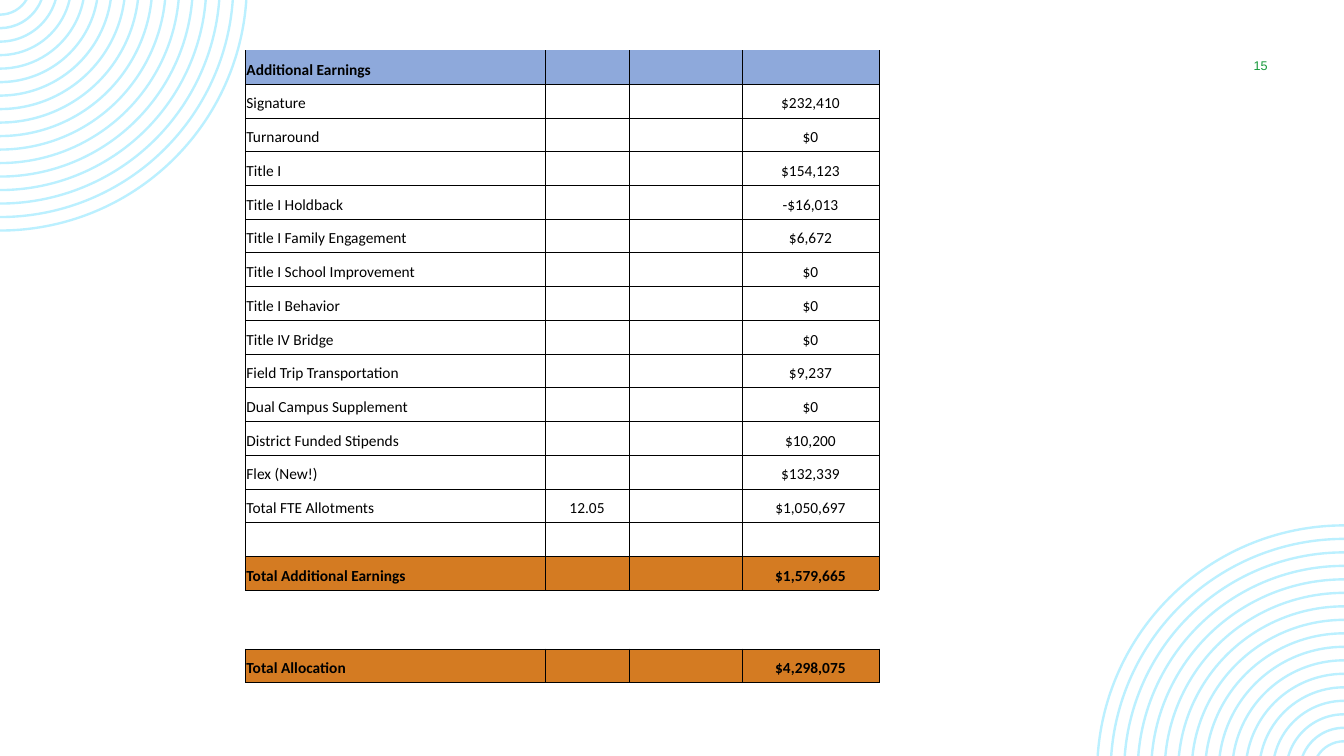
from math import asin, cos, degrees, sin
from lxml.etree import SubElement
from pptx import Presentation
from pptx.dml.color import RGBColor
from pptx.enum.text import MSO_ANCHOR, PP_ALIGN
from pptx.oxml.ns import qn
from pptx.util import Cm, Pt

COLORS = {
    "rings": "BBF0FF",
    "heading": "8EA9DB",
    "total": "D47B22",
    "ink": "000000",
    "page": "159839",
}

PAGE_NUMBER = "15"
EARNINGS = [
    ("heading", "Additional Earnings", "", ""),
    ("item", "Signature", "", "$232,410"),
    ("item", "Turnaround", "", "$0"),
    ("item", "Title I", "", "$154,123"),
    ("item", "Title I Holdback", "", "-$16,013"),
    ("item", "Title I Family Engagement", "", "$6,672"),
    ("item", "Title I School Improvement", "", "$0"),
    ("item", "Title I Behavior", "", "$0"),
    ("item", "Title IV Bridge", "", "$0"),
    ("item", "Field Trip Transportation", "", "$9,237"),
    ("item", "Dual Campus Supplement", "", "$0"),
    ("item", "District Funded Stipends", "", "$10,200"),
    ("item", "Flex (New!)", "", "$132,339"),
    ("item", "Total FTE Allotments", "12.05", "$1,050,697"),
    ("item", "", "", ""),
    ("total", "Total Additional Earnings", "", "$1,579,665"),
    ("gap", "", "", ""),
    ("gap", "", "", ""),
    ("total", "Total Allocation", "", "$4,298,075"),
    ("gap", "", "", ""),
]
COLUMN_WIDTHS = [7.54, 2.13, 2.84, 3.45, 1.07]
BOXED_COLUMNS = 4
ROW_HEIGHT, GAP_HEIGHT = 0.85, 0.74
TABLE_LEFT, TABLE_TOP = 6.19, 1.27
PLAIN_STYLE = "{2D5ABB26-0587-4C30-8999-92F81FD0307C}"

SLIDE_WIDTH, SLIDE_HEIGHT = 33.87, 19.05
RING_COUNT, RING_STEP, RING_THICKNESS = 17, 0.34, 0.06
OUTER_RADIUS, CENTER_OFFSET = 6.25, 0.41


def arc_ends(radius):
    start = asin(CENTER_OFFSET / radius)
    return [(radius * cos(start), 0), (0, radius - CENTER_OFFSET)]


def bend(segment, radius, start, sweep):
    path = segment.getparent()
    size = str(Cm(radius))
    curve = SubElement(
        path, qn("a:arcTo"), wR=size, hR=size,
        stAng=str(round(start * 60000)), swAng=str(round(sweep * 60000)),
    )
    path.replace(segment, curve)


def draw_rings(slide, place, turn):
    radii = [OUTER_RADIUS - i * RING_STEP for i in range(RING_COUNT)]
    outlines = [
        [
            tuple(Cm(v) for v in place(x, y))
            for x, y in arc_ends(radius) + arc_ends(radius - RING_THICKNESS)[::-1]
        ]
        for radius in radii
    ]
    builder = slide.shapes.build_freeform(*outlines[0][0])
    for i, outline in enumerate(outlines):
        if i:
            builder.move_to(*outline[0])
        builder.add_line_segments(outline[1:], close=True)
    rings = builder.convert_to_shape()
    segments = list(rings._element.iter(qn("a:lnTo")))
    for radius, outer, inner in zip(radii, segments[::3], segments[2::3]):
        inner_radius = radius - RING_THICKNESS
        outer_start = degrees(asin(CENTER_OFFSET / radius))
        inner_start = degrees(asin(CENTER_OFFSET / inner_radius))
        bend(outer, radius, turn + outer_start, 90 - outer_start)
        bend(inner, inner_radius, turn + 90, inner_start - 90)
    rings.shadow.inherit = False
    rings.fill.solid()
    rings.fill.fore_color.rgb = RGBColor.from_string(COLORS["rings"])
    rings.line.fill.background()


def draw_borders(cell, sides):
    properties = cell._tc.get_or_add_tcPr()
    for side in sides:
        border = SubElement(properties, qn(f"a:{side}"), w=str(Pt(0.5)))
        line_fill = SubElement(border, qn("a:solidFill"))
        SubElement(line_fill, qn("a:srgbClr"), val=COLORS["ink"])


def fill_cell(cell, row, column, text):
    kind = EARNINGS[row][0]
    if kind != "gap" and column < BOXED_COLUMNS:
        draw_borders(cell, ("lnL", "lnR", "lnT", "lnB") if row else ("lnL", "lnR", "lnB"))
    if kind in COLORS and column < BOXED_COLUMNS:
        cell.fill.solid()
        cell.fill.fore_color.rgb = RGBColor.from_string(COLORS[kind])
    else:
        cell.fill.background()
    cell.vertical_anchor = MSO_ANCHOR.BOTTOM
    cell.margin_left = cell.margin_right = cell.margin_top = Cm(0.02)
    cell.margin_bottom = Cm(0.12)
    paragraph = cell.text_frame.paragraphs[0]
    if text:
        paragraph.text = text
        paragraph.alignment = PP_ALIGN.CENTER if column else PP_ALIGN.LEFT
        paragraph.font.name = "Calibri"
        paragraph.font.size = Pt(11)
        paragraph.font.bold = kind in COLORS
        paragraph.font.color.rgb = RGBColor.from_string(COLORS["ink"])
    else:
        SubElement(paragraph._p, qn("a:endParaRPr"), sz="1100")


def draw_earnings(slide):
    heights = [GAP_HEIGHT if kind == "gap" else ROW_HEIGHT for kind, *_ in EARNINGS]
    frame = slide.shapes.add_table(
        len(EARNINGS), len(COLUMN_WIDTHS), Cm(TABLE_LEFT), Cm(TABLE_TOP),
        Cm(sum(COLUMN_WIDTHS)), Cm(sum(heights)),
    )
    table = frame.table
    table.first_row = False
    table.horz_banding = False
    next(frame._element.iter(qn("a:tableStyleId"))).text = PLAIN_STYLE
    for column, width in zip(table.columns, COLUMN_WIDTHS):
        column.width = Cm(width)
    for row, (_, label, positions, amount) in enumerate(EARNINGS):
        table.rows[row].height = Cm(heights[row])
        for column, text in enumerate((label, positions, "", amount, "")):
            fill_cell(table.cell(row, column), row, column, text)


def draw_page_number(slide):
    frame = slide.shapes.add_textbox(Cm(30.4), Cm(1.27), Cm(2.74), Cm(0.76)).text_frame
    frame.word_wrap = True
    frame.vertical_anchor = MSO_ANCHOR.MIDDLE
    paragraph = frame.paragraphs[0]
    paragraph.text = PAGE_NUMBER
    paragraph.alignment = PP_ALIGN.CENTER
    paragraph.font.name = "Arial"
    paragraph.font.size = Pt(9)
    paragraph.font.color.rgb = RGBColor.from_string(COLORS["page"])


def main():
    presentation = Presentation()
    presentation.slide_width = Cm(SLIDE_WIDTH)
    presentation.slide_height = Cm(SLIDE_HEIGHT)
    slide = presentation.slides.add_slide(presentation.slide_layouts[6])
    draw_rings(slide, lambda x, y: (x, y), 0)
    draw_rings(slide, lambda x, y: (SLIDE_WIDTH - x, SLIDE_HEIGHT - y), 180)
    draw_page_number(slide)
    draw_earnings(slide)
    presentation.save("out.pptx")


if __name__ == "__main__":
    main()
